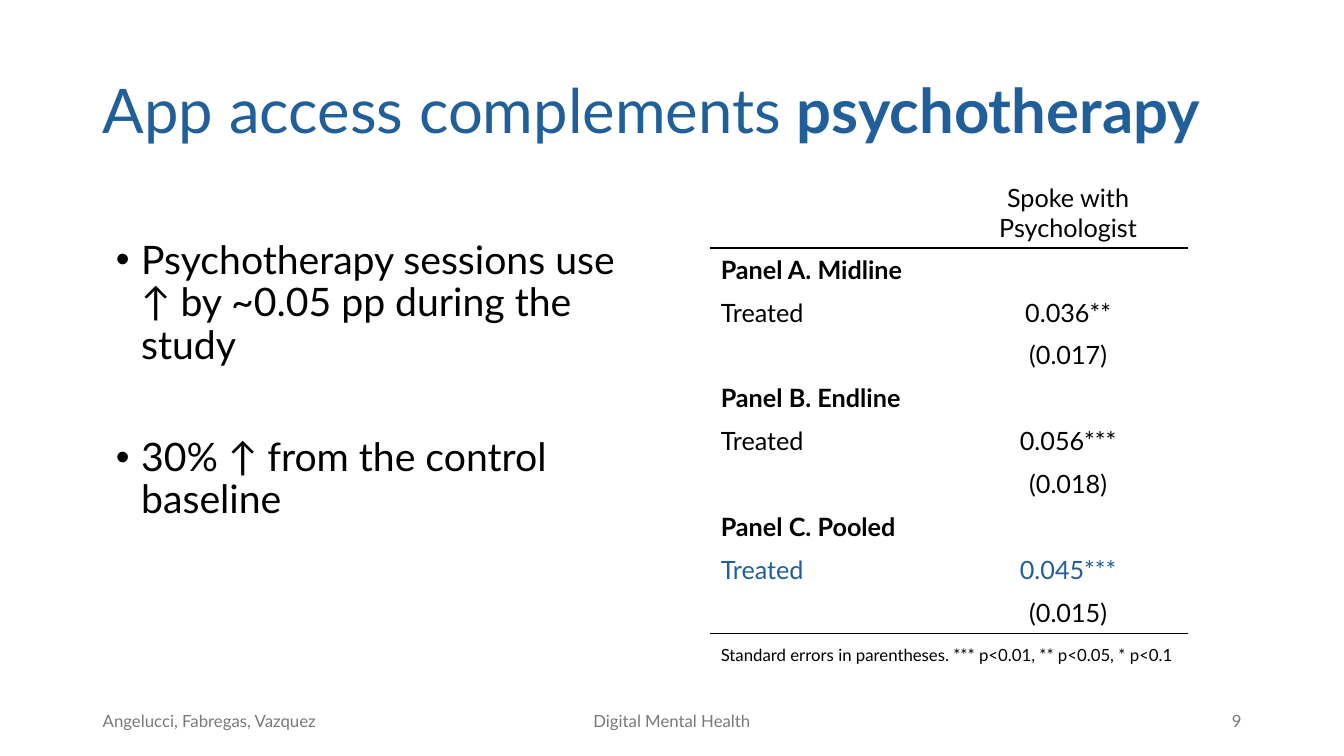
from lxml.etree import SubElement
from pptx import Presentation
from pptx.dml.color import RGBColor
from pptx.enum.text import MSO_ANCHOR as Anchor, MSO_AUTO_SIZE as AutoSize, PP_ALIGN as Align
from pptx.oxml import parse_xml
from pptx.oxml.ns import nsdecls, qn
from pptx.util import Cm, Pt

BLACK, BLUE, GREY = "000000", "215F9A", "797979"


def colour(code):
    return RGBColor.from_string(code)


class Deck:
    font = "Lato"

    def __init__(self):
        self.file = Presentation()
        self.file.slide_width, self.file.slide_height = Cm(33.87), Cm(19.05)
        self.slide = self.file.slides.add_slide(self.file.slide_layouts[5])

    def style(self, run, size, code=BLACK, bold=False):
        run.font.name, run.font.size, run.font.bold = self.font, Pt(size), bold
        run.font.color.rgb = colour(code)

    def title(self, plain, strong, left, top, width, height):
        heading = self.slide.shapes.title
        heading.left, heading.top = Cm(left), Cm(top)
        heading.width, heading.height = Cm(width), Cm(height)
        frame = heading.text_frame
        frame.auto_size, frame.vertical_anchor = AutoSize.NONE, Anchor.MIDDLE
        line = frame.paragraphs[0]
        line.alignment, line.line_spacing = Align.LEFT, 0.9
        for words, bold in ((plain, False), (strong, True)):
            run = line.add_run()
            run.text = words
            self.style(run, 44, BLUE, bold)

    def box(self, text, left, top, width, height, size, code=BLACK,
            align=Align.LEFT, anchor=Anchor.TOP):
        frame = self.slide.shapes.add_textbox(
            Cm(left), Cm(top), Cm(width), Cm(height)).text_frame
        frame.word_wrap, frame.vertical_anchor = True, anchor
        frame.text = text
        for paragraph in frame.paragraphs:
            paragraph.alignment = align
            self.style(paragraph.runs[0], size, code)
        return frame

    def bullets(self, points, gaps, left, top, width, height):
        frame = self.box("\n".join(points), left, top, width, height, 28)
        for paragraph, gap in zip(frame.paragraphs, gaps):
            paragraph.line_spacing, paragraph.space_before = 0.9, Pt(gap)
            props = paragraph._p.get_or_add_pPr()
            props.set("marL", str(Cm(0.64)))
            props.set("indent", str(-Cm(0.64)))
            SubElement(props, qn("a:buFont"), typeface="Arial")
            SubElement(props, qn("a:buChar"), char="•")

    def rule(self, cell, side):
        cell._tc.get_or_add_tcPr().insert(0, parse_xml(
            f'<a:{side} {nsdecls("a")} w="12700"><a:solidFill>'
            f'<a:srgbClr val="{BLACK}"/></a:solidFill></a:{side}>'))

    def cell(self, cell, text, size, code, bold, align):
        cell.fill.background()
        cell.vertical_anchor = Anchor.MIDDLE
        cell.text = text
        line = cell.text_frame.paragraphs[0]
        line.alignment, line.font.size = align, Pt(size)
        for run in line.runs:
            self.style(run, size, code, bold)

    def table(self, rows, ruled, left, top, width, header_height, row_height):
        height = header_height + row_height * (len(rows) - 1)
        grid = self.slide.shapes.add_table(
            len(rows), 2, Cm(left), Cm(top), Cm(width), Cm(height)).table
        grid.first_row = grid.horz_banding = False
        last = len(rows) - 1
        for r, (label, value, code) in enumerate(rows):
            grid.rows[r].height = Cm(row_height if r else header_height)
            size = 12 if r == last else 18
            bold = label.startswith("Panel")
            self.cell(grid.cell(r, 0), label, size, code, bold, Align.LEFT)
            self.cell(grid.cell(r, 1), value, size, code, False, Align.CENTER)
        for r in ruled:
            for c in range(2):
                self.rule(grid.cell(r, c), "a:lnB"[2:])
                self.rule(grid.cell(r + 1, c), "lnT")
        grid.cell(last, 0).merge(grid.cell(last, 1))


def main():
    deck = Deck()
    deck.title("App access complements", " psychotherapy", 2.34, 1.02, 29.21, 3.68)
    deck.bullets(["Psychotherapy sessions use ↑ by ~0.05 pp during the study",
                  "30% ↑ from the control baseline"], (10, 50), 2.67, 5.94, 13.61, 9.73)

    footers = (("Angelucci, Fabregas, Vazquez", 2.34, 7.62, Align.LEFT),
               ("Digital Mental Health", 11.22, 11.43, Align.CENTER),
               ("9", 23.92, 7.62, Align.RIGHT))
    for text, left, width, align in footers:
        deck.box(text, left, 17.66, width, 1.01, 12, GREY, align, Anchor.MIDDLE)

    panels = (("Panel A. Midline", "0.036**", "(0.017)", BLACK),
              ("Panel B. Endline", "0.056***", "(0.018)", BLACK),
              ("Panel C. Pooled", "0.045***", "(0.015)", BLUE))
    rows = [("", "Spoke with Psychologist", BLACK)]
    for panel, effect, error, code in panels:
        rows += [(panel, "", BLACK), ("Treated", effect, code), ("", error, BLACK)]
    rows.append(("Standard errors in parentheses. *** p<0.01, ** p<0.05, * p<0.1", "", BLACK))
    deck.table(rows, (0, 9), 17.91, 4.47, 12.01, 1.78, 1.08)
    deck.file.save("out.pptx")


if __name__ == "__main__":
    main()
